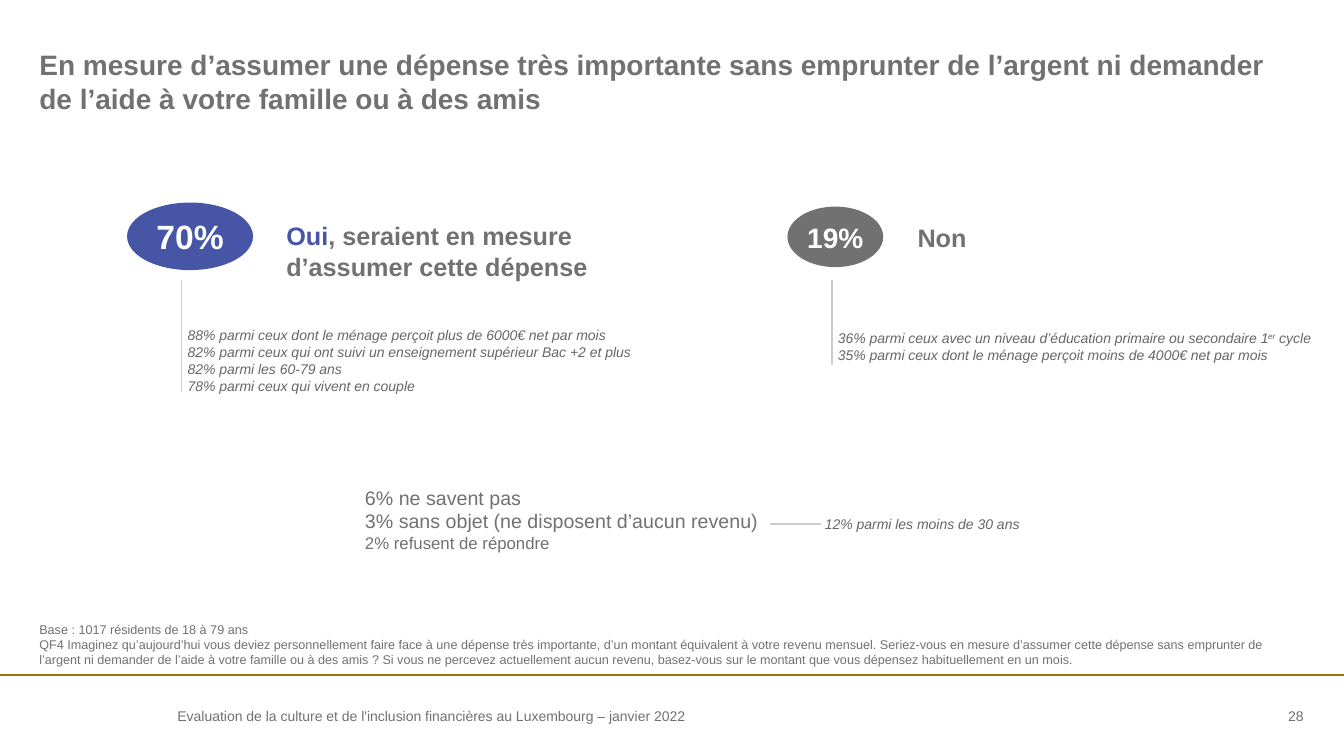
"""Build the survey slide on the ability to cover a very large expense."""
from dataclasses import dataclass

from lxml.etree import SubElement
from pptx import Presentation
from pptx.dml.color import RGBColor
from pptx.enum.shapes import MSO_CONNECTOR as Connector, MSO_SHAPE as Preset
from pptx.enum.text import MSO_ANCHOR as Anchor, MSO_AUTO_SIZE as AutoSize, PP_ALIGN as Align
from pptx.oxml.ns import qn
from pptx.util import Pt

EMU_PER_PX = 9144
COMPARISON_LAYOUT = 4


@dataclass(frozen=True)
class Theme:
    font: str = "Arial"
    grey: str = "717171"
    blue: str = "4655A5"
    detail_grey: str = "666666"
    white: str = "FFFFFF"
    hairline: str = "CCCCCC"
    gold: str = "9C7200"
    title: int = 20
    heading: int = 18
    answer: int = 14
    minor_answer: int = 12
    detail: int = 10
    base: int = 9


THEME = Theme()


@dataclass(frozen=True)
class Box:
    left: int
    top: int
    width: int
    height: int


@dataclass(frozen=True)
class Style:
    size: int
    color: str = THEME.grey
    bold: bool = False
    italic: bool = False
    align: Align = Align.LEFT
    anchor: Anchor = Anchor.TOP
    inset: int = 0


@dataclass(frozen=True)
class Span:
    text: str
    color: str | None = None
    size: int | None = None
    raised: bool = False


@dataclass(frozen=True)
class Group:
    share: str
    share_size: int
    color: str
    oval: Box
    heading: tuple[Span, ...]
    heading_box: Box
    heading_slot: int
    details: list[tuple[Span, ...]]
    details_box: Box
    details_slot: int
    rule: tuple[int, int, int, int]


TITLE = Style(THEME.title, bold=True)
HEADING = Style(THEME.heading, bold=True)
DETAIL = Style(THEME.detail, THEME.detail_grey, italic=True, inset=4)
ANSWER = Style(THEME.answer)
BASE = Style(THEME.base, anchor=Anchor.BOTTOM)
FOOTER = Style(THEME.detail, anchor=Anchor.MIDDLE)
PAGE = Style(THEME.detail, align=Align.RIGHT, anchor=Anchor.MIDDLE)

GROUPS = [
    Group(
        "70%", 24, THEME.blue, Box(126, 201, 125, 67),
        (Span("Oui", THEME.blue), Span(", seraient en mesure d’assumer cette dépense")),
        Box(284, 219, 354, 61), 1,
        [
            (Span("88% parmi ceux dont le ménage perçoit plus de 6000€ net par mois"),),
            (Span("82% parmi ceux qui ont suivi un enseignement supérieur Bac +2 et plus"),),
            (Span("82% parmi les 60-79 ans"),),
            (Span("78% parmi ceux qui vivent en couple"),),
        ],
        Box(182, 320, 464, 75), 2, (180, 278, 180, 389),
    ),
    Group(
        "19%", 20, THEME.grey, Box(781, 205, 95, 60),
        (Span("Non"),), Box(910, 221, 132, 30), 3,
        [
            (Span("36% parmi ceux avec un niveau d’éducation primaire ou secondaire 1"),
             Span("er", raised=True), Span(" cycle")),
            (Span("35% parmi ceux dont le ménage perçoit moins de 4000€ net par mois"),),
        ],
        Box(827, 323, 488, 42), 4, (825, 278, 825, 362),
    ),
]


def px(length: int) -> int:
    return length * EMU_PER_PX


def place(shape, box: Box) -> None:
    shape.left, shape.top = px(box.left), px(box.top)
    shape.width, shape.height = px(box.width), px(box.height)


def write(shape, lines: list[tuple[Span, ...]], style: Style) -> None:
    frame = shape.text_frame
    frame.word_wrap = True
    frame.auto_size = AutoSize.NONE
    frame.vertical_anchor = style.anchor
    frame.margin_left = frame.margin_right = px(style.inset)
    frame.margin_top = frame.margin_bottom = px(style.inset)
    for index, spans in enumerate(lines):
        paragraph = frame.add_paragraph() if index else frame.paragraphs[0]
        paragraph.text = spans[0].text
        for span in spans[1:]:
            paragraph.add_run().text = span.text
        properties = paragraph._p.get_or_add_pPr()
        properties.set("marL", "0")
        properties.set("indent", "0")
        SubElement(properties, qn("a:buNone"))
        paragraph.alignment = style.align
        paragraph.space_before = Pt(0)
        for run, span in zip(paragraph.runs, spans):
            font = run.font
            font.name = THEME.font
            font.size = Pt(span.size or style.size)
            font.bold, font.italic = style.bold, style.italic
            font.color.rgb = RGBColor.from_string(span.color or style.color)
            if span.raised:
                font._element.set("baseline", "30000")


def add_text(slide, box: Box, lines: list[tuple[Span, ...]], style: Style):
    text_box = slide.shapes.add_textbox(0, 0, 0, 0)
    place(text_box, box)
    write(text_box, lines, style)
    return text_box


def add_rule(slide, ends: tuple[int, int, int, int], color: str, width: float):
    rule = slide.shapes.add_connector(Connector.STRAIGHT, *map(px, ends))
    rule.line.color.rgb = RGBColor.from_string(color)
    rule.line.width = Pt(width)
    SubElement(rule._element.spPr, qn("a:effectLst"))
    return rule


def add_group(slide, group: Group) -> None:
    oval = slide.shapes.add_shape(Preset.OVAL, 0, 0, 0, 0)
    place(oval, group.oval)
    oval.shadow.inherit = False
    oval.fill.solid()
    oval.fill.fore_color.rgb = RGBColor.from_string(group.color)
    oval.line.fill.background()
    share_style = Style(group.share_size, THEME.white, bold=True, align=Align.CENTER,
                        anchor=Anchor.MIDDLE, inset=4)
    write(oval, [(Span(group.share),)], share_style)
    heading = slide.placeholders[group.heading_slot]
    place(heading, group.heading_box)
    write(heading, [group.heading], HEADING)
    details = slide.placeholders[group.details_slot]
    place(details, group.details_box)
    write(details, group.details, DETAIL)
    add_rule(slide, group.rule, THEME.hairline, 1)


def main() -> None:
    deck = Presentation()
    deck.slide_width, deck.slide_height = px(1333), px(750)
    slide = deck.slides.add_slide(deck.slide_layouts[COMPARISON_LAYOUT])

    title = slide.shapes.title
    place(title, Box(39, 47, 1254, 44))
    write(title, [(Span("En mesure d’assumer une dépense très importante sans emprunter de l’argent ni demander de l’aide à votre famille ou à des amis"),)], TITLE)
    for group in GROUPS:
        add_group(slide, group)

    add_text(slide, Box(362, 482, 403, 67), [
        (Span("6% ne savent pas"),),
        (Span("3% sans objet (ne disposent d’aucun revenu)"),),
        (Span("2% refusent de répondre", size=THEME.minor_answer),),
    ], ANSWER)
    young_detail = add_text(slide, Box(814, 507, 208, 26), [(Span("12% parmi les moins de 30 ans"),)], DETAIL)
    young_rule = add_rule(slide, (764, 520, 814, 520), THEME.hairline, 1)
    young_rule.end_connect(young_detail, 1)

    add_text(slide, Box(39, 617, 1254, 45), [
        (Span("Base : 1017 résidents de 18 à 79 ans"),),
        (Span("QF4 Imaginez qu’aujourd’hui vous deviez personnellement faire face à une dépense très importante, d’un montant équivalent à votre revenu mensuel. Seriez-vous en mesure d’assumer cette dépense sans emprunter de l’argent ni demander de l’aide à votre famille ou à des amis ? Si vous ne percevez actuellement aucun revenu, basez-vous sur le montant que vous dépensez habituellement en un mois."),),
    ], BASE)
    add_rule(slide, (0, 670, 1333, 670), THEME.gold, 1.5)
    add_text(slide, Box(176, 699, 515, 22), [(Span("Evaluation de la culture et de l'inclusion financières au Luxembourg – janvier 2022"),)], FOOTER)
    add_text(slide, Box(1187, 699, 106, 22), [(Span("28"),)], PAGE)
    deck.save("out.pptx")


if __name__ == "__main__":
    main()
